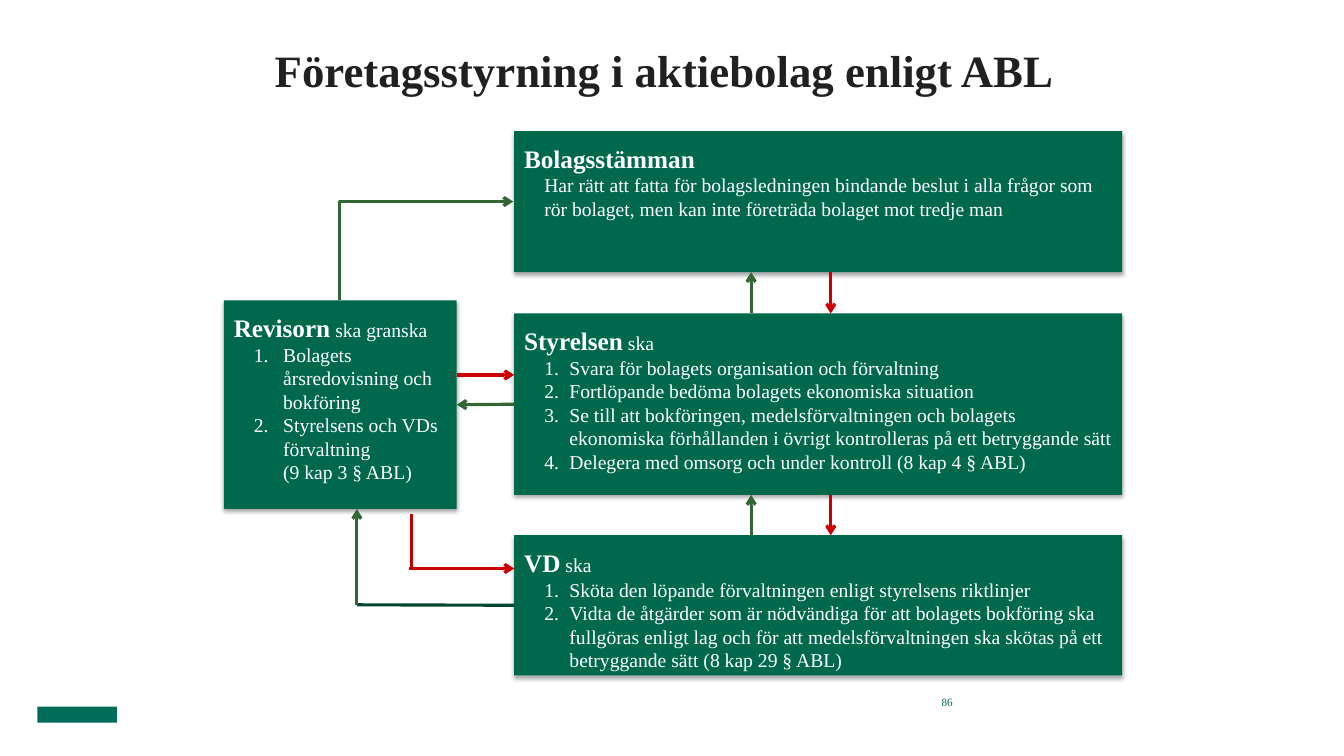
from lxml import etree
from pptx import Presentation
from pptx.dml.color import RGBColor
from pptx.enum.shapes import MSO_CONNECTOR, MSO_SHAPE
from pptx.enum.text import MSO_ANCHOR, PP_ALIGN
from pptx.oxml import parse_xml
from pptx.oxml.ns import nsdecls, qn
from pptx.util import Inches, Pt

STRAIGHT, ELBOW = MSO_CONNECTOR.STRAIGHT, MSO_CONNECTOR.ELBOW
RECT = MSO_SHAPE.RECTANGLE
TOP, MIDDLE, BOTTOM = MSO_ANCHOR.TOP, MSO_ANCHOR.MIDDLE, MSO_ANCHOR.BOTTOM
LEFT, CENTER, RIGHT = PP_ALIGN.LEFT, PP_ALIGN.CENTER, PP_ALIGN.RIGHT


class Theme:
    font = "Times New Roman"
    ink = RGBColor.from_string("202020")
    white = RGBColor.from_string("FFFFFF")
    box = RGBColor.from_string("00684B")
    mark = RGBColor.from_string("006C59")
    green = RGBColor.from_string("336633")
    dark = RGBColor.from_string("004532")
    red = RGBColor.from_string("CC0000")
    deep = RGBColor.from_string("C00000")
    title, head, body, small = Pt(32), Pt(18), Pt(14), Pt(8)
    line = Pt(2.25)


def style(run, size, color, bold=False):
    run.font.name = Theme.font
    run.font.size = size
    run.font.bold = bold
    run.font.color.rgb = color


def link(kind, start, end, color, arrow=True):
    line = slide.shapes.add_connector(kind, *map(Inches, start + end))
    line.line.color.rgb = color
    line.line.width = Theme.line
    props = line._element.spPr
    if arrow:
        etree.SubElement(props.find(qn("a:ln")), qn("a:tailEnd"), type="arrow")
    etree.SubElement(props, qn("a:effectLst"))
    return line


deck = Presentation()
deck.slide_width, deck.slide_height = Inches(13.33), Inches(7.5)
slide = deck.slides.add_slide(deck.slide_layouts[5])

title = slide.shapes.title
title.left, title.top = Inches(1.71), Inches(0.18)
title.width, title.height = Inches(9.76), Inches(0.78)
title.text_frame.text = "Företagsstyrning i aktiebolag enligt ABL"
page = slide.shapes.add_textbox(Inches(9.17), Inches(6.87), Inches(0.28), Inches(0.18))
page.text_frame.text = "86"

for shape, size, color, bold, align, anchor in (
    (title, Theme.title, Theme.ink, True, CENTER, BOTTOM),
    (page, Theme.small, Theme.mark, False, RIGHT, MIDDLE),
):
    frame = shape.text_frame
    frame.word_wrap = True
    frame.vertical_anchor = anchor
    frame.margin_left = frame.margin_right = 0
    frame.margin_top = frame.margin_bottom = 0
    para = frame.paragraphs[0]
    para.alignment = align
    style(para.runs[0], size, color, bold)

badge = slide.shapes.add_shape(RECT, Inches(0.37), Inches(7.01), Inches(0.79), Inches(0.16))
badge.shadow.inherit = False
badge.fill.solid()
badge.fill.fore_color.rgb = Theme.mark
badge.line.fill.background()

boxes = (
    ((2.22, 2.98, 2.31, 2.07), "Revisorn", " ska granska", 0.49, -0.29, (
        "Bolagets årsredovisning och bokföring",
        "Styrelsens och VDs förvaltning\v(9 kap 3 § ABL)",
    )),
    ((5.1, 1.3, 6.03, 1.4), "Bolagsstämman", "", 0.2, 0, (
        "Har rätt att fatta för bolagsledningen bindande beslut i alla frågor "
        "som rör bolaget, men kan inte företräda bolaget mot tredje man",
    )),
    ((5.1, 3.11, 6.03, 1.8), "Styrelsen", " ska", 0.45, -0.25, (
        "Svara för bolagets organisation och förvaltning",
        "Fortlöpande bedöma bolagets ekonomiska situation",
        "Se till att bokföringen, medelsförvaltningen och bolagets ekonomiska "
        "förhållanden i övrigt kontrolleras på ett betryggande sätt",
        "Delegera med omsorg och under kontroll (8 kap 4 § ABL)",
    )),
    ((5.1, 5.31, 6.03, 1.39), "VD", " ska", 0.45, -0.25, (
        "Sköta den löpande förvaltningen enligt styrelsens riktlinjer",
        "Vidta de åtgärder som är nödvändiga för att bolagets bokföring ska "
        "fullgöras enligt lag och för att medelsförvaltningen ska skötas på ett "
        "betryggande sätt (8 kap 29 § ABL)",
    )),
)
made = []
for place, name, rest, margin, indent, duties in boxes:
    box = slide.shapes.add_shape(RECT, *map(Inches, place))
    made.append(box)
    box.fill.solid()
    box.fill.fore_color.rgb = Theme.box
    box.line.fill.background()
    box._element.spPr.append(parse_xml(
        f'<a:effectLst {nsdecls("a")}><a:outerShdw blurRad="{Pt(3.1)}" dist="{Pt(1.8)}" '
        'dir="5400000" rotWithShape="0"><a:srgbClr val="000000"><a:alpha val="35000"/>'
        "</a:srgbClr></a:outerShdw></a:effectLst>"
    ))
    frame = box.text_frame
    frame.word_wrap = True
    frame.vertical_anchor = TOP
    frame.margin_left = frame.margin_right = Inches(0.1)
    frame.margin_top, frame.margin_bottom = Inches(0.12), Inches(0.05)
    head = frame.paragraphs[0]
    head.alignment = LEFT
    head.text = name
    style(head.runs[0], Theme.head, Theme.white, True)
    if rest:
        run = head.add_run()
        run.text = rest
        style(run, Theme.body, Theme.white)
    for duty in duties:
        para = frame.add_paragraph()
        para.text = duty
        para.alignment = LEFT
        props = para._p.get_or_add_pPr()
        props.set("marL", str(Inches(margin)))
        props.set("indent", str(Inches(indent)))
        if indent:
            etree.SubElement(props, qn("a:buAutoNum"), type="arabicPeriod")
        for run in para.runs:
            style(run, Theme.body, Theme.white)
        for gap in para._p.findall(qn("a:br")):
            etree.SubElement(gap, qn("a:rPr"), sz=str(int(Theme.body.pt * 100)))

audit, owners, board, chief = made

for upper, lower in ((2.7, 3.11), (4.91, 5.31)):
    link(STRAIGHT, (8.24, upper), (8.24, lower), Theme.red)
    link(STRAIGHT, (7.45, lower), (7.45, upper), Theme.green)

link(STRAIGHT, (4.53, 3.72), (5.1, 3.72), Theme.red)
back = link(STRAIGHT, (5.1, 4), (4.53, 4), Theme.green)
back.begin_connect(board, 1)
back.end_connect(audit, 3)

link(STRAIGHT, (4.08, 5.1), (4.08, 5.64), Theme.deep, False)
link(STRAIGHT, (4.06, 5.64), (5.1, 5.64), Theme.red)
stem = link(STRAIGHT, (3.54, 6), (5.1, 6), Theme.dark, False)
stem.end_connect(chief, 1)
link(STRAIGHT, (3.54, 6), (3.54, 5.05), Theme.green)

bend = link(ELBOW, (3.37, 2.98), (5.1, 2), Theme.green)
bend.begin_connect(audit, 0)
bend.end_connect(owners, 1)
bend.left, bend.top = Inches(3.74), Inches(1.63)
bend.width, bend.height = Inches(0.98), Inches(1.72)
props = bend._element.spPr
props.find(qn("a:prstGeom")).set("prst", "bentConnector2")
for key, value in (("rot", "5400000"), ("flipH", "1"), ("flipV", "1")):
    props.find(qn("a:xfrm")).set(key, value)

deck.save("out.pptx")
